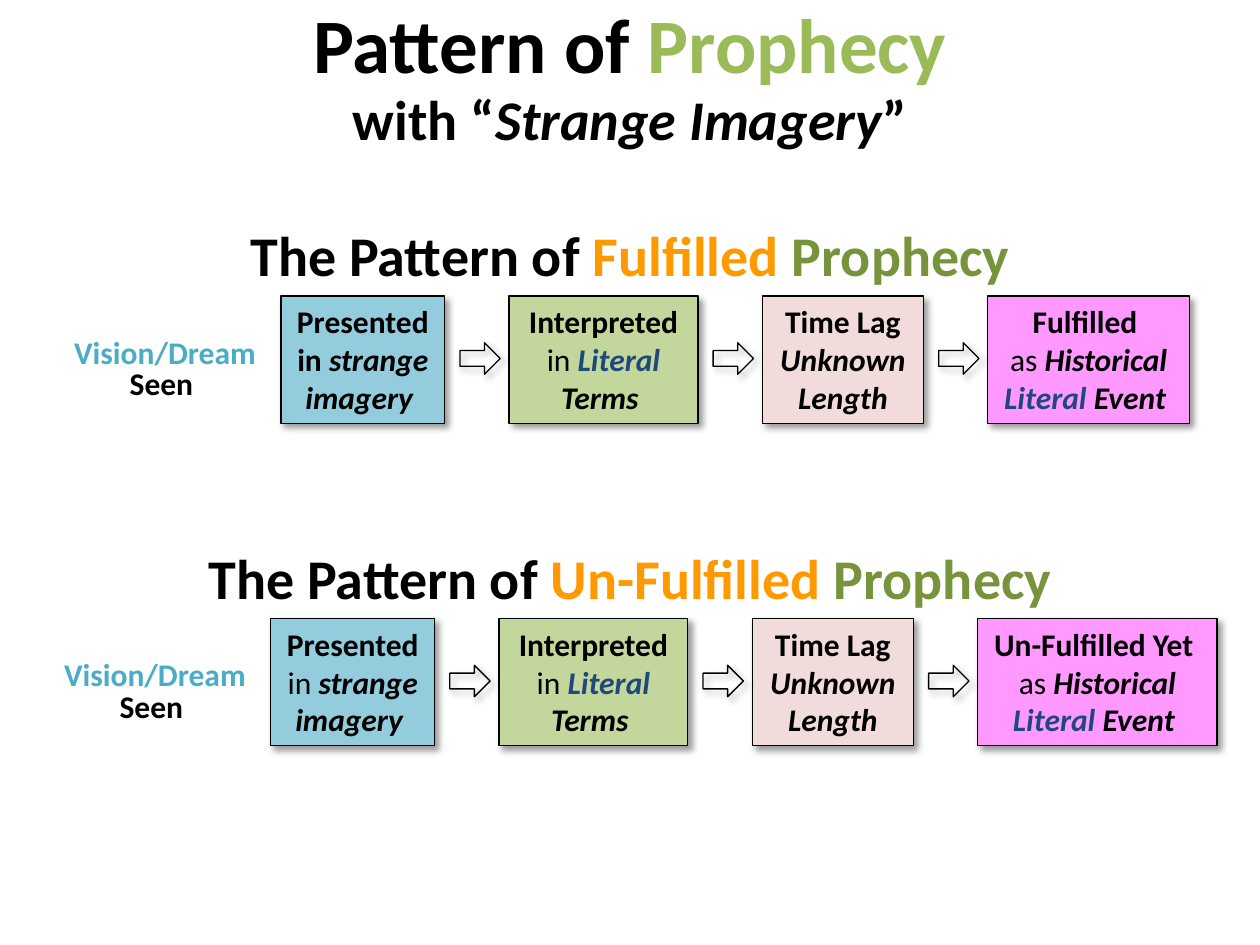
import pptx
import pptx.util
import pptx.dml.color
import pptx.enum.shapes
import pptx.enum.text
import pptx.oxml
import pptx.oxml.ns

Inches = pptx.util.Inches
Pt = pptx.util.Pt
MSO = pptx.enum.shapes.MSO_SHAPE
ANCHOR = pptx.enum.text.MSO_ANCHOR

BLACK, ORANGE, GREEN, NAVY = "000000", "FF9900", "77933C", "1F497D"
SHADOW = (
    '<a:effectLst %s><a:outerShdw blurRad="%d" dist="%d" dir="2700000" algn="tl" rotWithShape="0">'
    '<a:srgbClr val="000000"><a:alpha val="40000"/></a:srgbClr></a:outerShdw></a:effectLst>'
    % (pptx.oxml.ns.nsdecls("a"), Pt(4), Pt(3)))


def rgb(value):
    return pptx.dml.color.RGBColor.from_string(value)


def write(sp, paragraphs, size=18, anchor=ANCHOR.TOP, spacing=None, shadow=False):
    """Fill a shape with paragraphs, each a list of (text, format) runs."""
    tf = sp.text_frame
    tf.word_wrap = True
    tf.auto_size = pptx.enum.text.MSO_AUTO_SIZE.SHAPE_TO_FIT_TEXT
    tf.vertical_anchor = anchor
    for i, runs in enumerate(paragraphs):
        p = tf.add_paragraph() if i else tf.paragraphs[0]
        p.alignment = pptx.enum.text.PP_ALIGN.CENTER
        if spacing:
            p.line_spacing = Pt(spacing)
        for text, fmt in runs:
            r = p.add_run()
            r.text = text
            r.font.name = "Calibri"
            r.font.size = Pt(fmt.get("size", size))
            r.font.bold = fmt.get("bold", True)
            r.font.italic = fmt.get("italic", False)
            r.font.color.rgb = rgb(fmt.get("color", BLACK))
            if shadow:
                fill = r.font._element.find(pptx.oxml.ns.qn("a:solidFill"))
                fill.addnext(pptx.oxml.parse_xml(SHADOW))


prs = pptx.Presentation()
prs.slide_width, prs.slide_height = Inches(10), Inches(7.5)
s = prs.slides.add_slide(prs.slide_layouts[6])

# Run formats
plain = {}
light = {"bold": False}
ital = {"italic": True}
literal = {"italic": True, "color": NAVY}

# Main title
sp = s.shapes.add_textbox(0, Inches(0.15), Inches(10), Inches(1.11))
write(sp, [[("Pattern of ", plain), ("Prophecy", {"color": "9BBB59"})],
           [("with “", {"size": 32}), ("Strange Imagery", {"size": 32, "italic": True}),
            ("”", {"size": 32})]],
      size=44, anchor=ANCHOR.MIDDLE, spacing=36, shadow=True)

# Two rows: heading word, left shift, top, first box text, last box heading and width
rows = [
    ("Fulfilled", 0, 1.7, [("Presented in ", plain)], "Fulfilled ", 1.6),
    ("Un-Fulfilled", -0.08, 4.26, [("Presented ", plain), ("in ", light)],
     "Un-Fulfilled Yet ", 1.9),
]
for status, dx, top, presented, outcome, last_width in rows:
    # Row heading
    sp = s.shapes.add_textbox(0, Inches(top), Inches(10), Inches(0.64))
    write(sp, [[("The Pattern of", plain), (f" {status} ", {"color": ORANGE}),
                ("Prophecy", {"color": GREEN})]],
          size=32, anchor=ANCHOR.MIDDLE, shadow=True)

    # Starting label
    sp = s.shapes.add_textbox(Inches(0.46 + dx), Inches(top + 0.94), Inches(1.7), Inches(0.61))
    write(sp, [[("Vision/Dream", {"color": "4BACC6"})], [("Seen ", plain)]], spacing=18)

    # Stage boxes: left, width, fill, paragraphs
    stages = [
        (2.23, 1.3, "93CDDD", [presented + [("strange imagery ", ital)]]),
        (4.04, 1.5, "C3D69B", [[("Interpreted ", plain), ("in ", light),
                                ("Literal", literal), (" Terms ", ital)]]),
        (6.05, 1.28, "F2DCDB", [[("Time Lag", plain)], [("Unknown Length", ital)]]),
        (7.84, last_width, "FF99FF", [[(outcome, plain)],
                                      [("as ", light), ("Historical ", ital),
                                       ("Literal", literal), (" Event ", ital)]]),
    ]
    for i, (left, width, fill, paragraphs) in enumerate(stages):
        sp = s.shapes.add_shape(MSO.RECTANGLE, Inches(left + dx), Inches(top + 0.65),
                                Inches(width), Inches(1.01))
        sp.fill.solid()
        sp.fill.fore_color.rgb = rgb(fill)
        write(sp, paragraphs)
        parts = [sp]
        # Arrow leading into every stage after the first
        if i:
            arrow = s.shapes.add_shape(MSO.RIGHT_ARROW, Inches(left + dx - 0.39),
                                       Inches(top + 1.02), Inches(0.32), Inches(0.25))
            arrow.fill.background()
            parts.append(arrow)
        for part in parts:
            part.line.color.rgb = rgb(BLACK)
            part.line.width = Pt(0.75)
            part._element.spPr.append(pptx.oxml.parse_xml(SHADOW))

prs.save("out.pptx")
